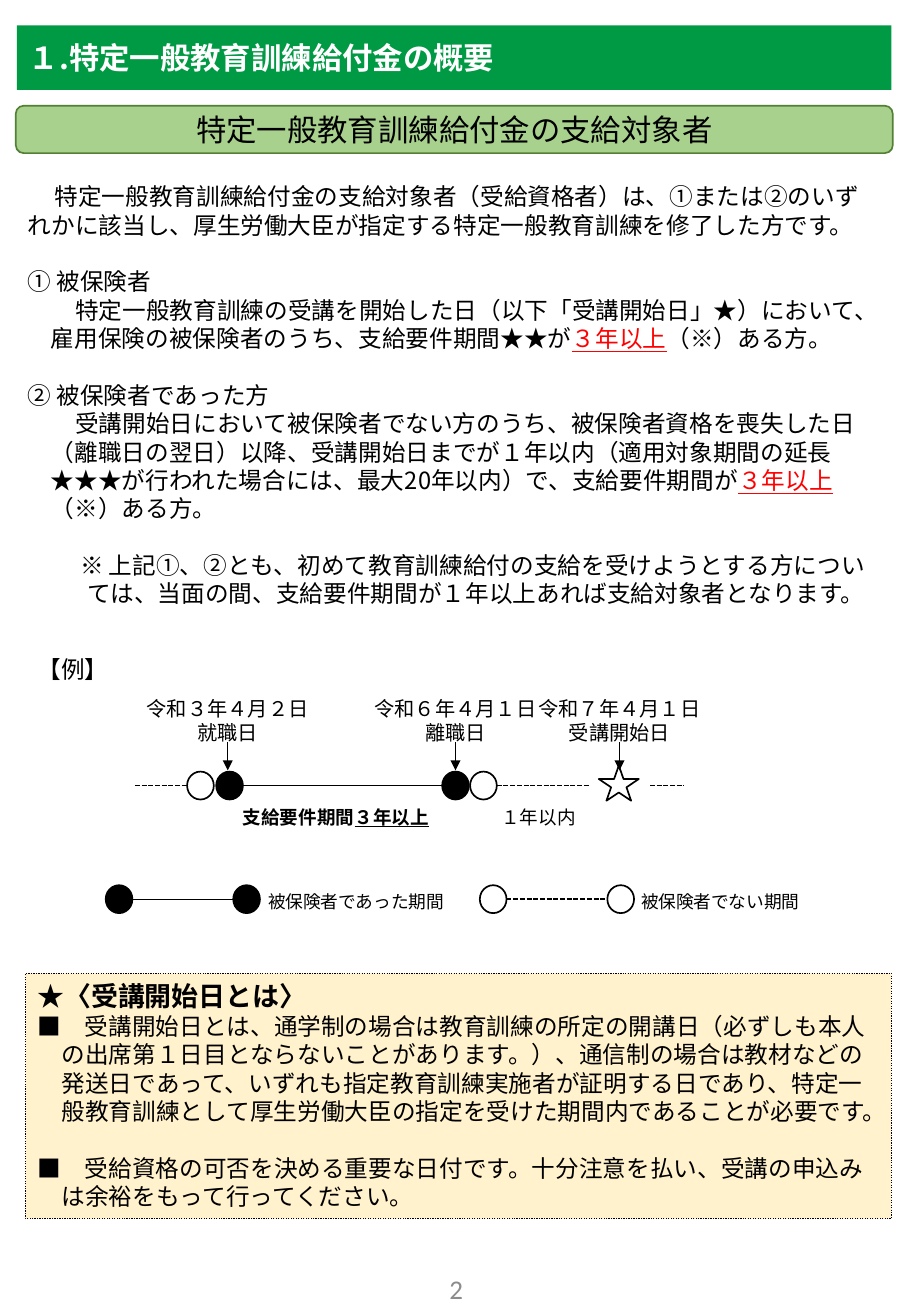
from dataclasses import dataclass
from typing import NamedTuple, Optional

from lxml.etree import SubElement
from pptx import Presentation
from pptx.dml.color import RGBColor
from pptx.enum.dml import MSO_LINE
from pptx.enum.shapes import MSO_CONNECTOR, MSO_SHAPE
from pptx.enum.text import MSO_ANCHOR, PP_ALIGN
from pptx.oxml.ns import qn
from pptx.util import Emu, Inches, Pt


@dataclass(frozen=True)
class Theme:
    font: str = "Noto Sans CJK JP"
    number_font: str = "Calibri"
    black: str = "000000"
    white: str = "FFFFFF"
    red: str = "FF0000"
    gray: str = "8C8C8C"
    banner: str = "009944"
    heading: str = "A9D18E"
    heading_edge: str = "538035"
    note: str = "FFF2CC"
    title: float = 18
    subtitle: float = 16
    body: float = 14
    date: float = 12
    span: float = 11
    legend: float = 10.5
    leading: float = 1.2
    thin: float = 0.5
    border: float = 0.75
    normal: float = 1


THEME = Theme()
CELL = Inches(0.1)  # the grid has square cells: 75 columns across the slide
CIRCLE_WIDTH, CIRCLE_HEIGHT = 2.2, 2.3
TIMELINE_ROW, LEGEND_ROW = 64.65, 74.0


class Area(NamedTuple):
    column: float
    row: float
    columns: float
    rows: float


class Run(NamedTuple):
    text: str
    color: str = THEME.black
    bold: bool = False
    underline: bool = False


class Paragraph(NamedTuple):
    runs: list[Run]
    size: float = THEME.body
    margin: float = 0
    indent: float = 0
    gap: bool = False


class Circle(NamedTuple):
    column: float
    row: float
    fill: str


class Segment(NamedTuple):
    start: float
    end: float
    row: float
    dashed: bool


class Event(NamedTuple):
    column: float
    date: str
    name: str


class Label(NamedTuple):
    area: Area
    runs: list[Run]
    size: float


THREE_YEARS = Run("３年以上", color=THEME.red, underline=True)
EXCEPTION = Run("（※）ある方。")
ELIGIBILITY = [
    Paragraph([Run("特定一般教育訓練給付金の支給対象者（受給資格者）は、①または②のいずれかに該当し、"
                   "厚生労働大臣が指定する特定一般教育訓練を修了した方です。")], indent=2.2),
    Paragraph([Run("① 被保険者")], gap=True),
    Paragraph([Run("特定一般教育訓練の受講を開始した日（以下「受講開始日」★）において、"
                   "雇用保険の被保険者のうち、支給要件期間★★が"),
               THREE_YEARS, EXCEPTION], margin=1.9, indent=2),
    Paragraph([Run("② 被保険者であった方")], gap=True),
    Paragraph([Run("受講開始日において被保険者でない方のうち、被保険者資格を喪失した日（離職日の翌日）以降、"
                   "受講開始日までが１年以内（適用対象期間の延長★★★が行われた場合には、"
                   "最大20年以内）で、支給要件期間が"),
               THREE_YEARS, EXCEPTION], margin=1.9, indent=2),
    Paragraph([Run("※ 上記①、②とも、初めて教育訓練給付の支給を受けようとする方については、"
                   "当面の間、支給要件期間が１年以上あれば支給対象者となります。")],
              margin=4.9, indent=-0.6, gap=True),
]
START_DATE_NOTE = [
    Paragraph([Run("★〈受講開始日とは〉", bold=True)], size=THEME.subtitle),
    Paragraph([Run("■　受講開始日とは、通学制の場合は教育訓練の所定の開講日（必ずしも本人の出席第１日目と"
                   "ならないことがあります。）、通信制の場合は教材などの発送日であって、いずれも"
                   "指定教育訓練実施者が証明する日であり、特定一般教育訓練として厚生労働大臣の指定を"
                   "受けた期間内であることが必要です。")], margin=2, indent=-2),
    Paragraph([Run("■　受給資格の可否を決める重要な日付です。十分注意を払い、受講の申込みは"
                   "余裕をもって行ってください。")], margin=2, indent=-2, gap=True),
]
SEGMENTS = [
    Segment(11.1, 15.4, TIMELINE_ROW, True),
    Segment(19.9, 36.4, TIMELINE_ROW, False),
    Segment(40.9, 48.5, TIMELINE_ROW, True),
    Segment(53.5, 56.3, TIMELINE_ROW, True),
    Segment(10.9, 19.4, LEGEND_ROW, False),
    Segment(41.7, 50, LEGEND_ROW, True),
]
CIRCLES = [
    Circle(16.5, TIMELINE_ROW, THEME.white), Circle(18.9, TIMELINE_ROW, THEME.black),
    Circle(37.5, TIMELINE_ROW, THEME.black), Circle(39.8, TIMELINE_ROW, THEME.white),
    Circle(9.8, LEGEND_ROW, THEME.black), Circle(20.3, LEGEND_ROW, THEME.black),
    Circle(40.6, LEGEND_ROW, THEME.white), Circle(51.1, LEGEND_ROW, THEME.white),
]
EVENTS = [
    Event(18.75, "令和３年４月２日", "就職日"),
    Event(37.5, "令和６年４月１日", "離職日"),
    Event(51, "令和７年４月１日", "受講開始日"),
]
LABELS = [
    Label(Area(2.1, 53.4, 10.5, 3.4), [Run("【例】")], THEME.body),
    Label(Area(19, 65.8, 17.5, 2.9),
          [Run("支給要件期間", bold=True), Run("３年以上", bold=True, underline=True)], THEME.span),
    Label(Area(40.3, 65.8, 8.3, 2.9), [Run("１年以内")], THEME.span),
    Label(Area(21.1, 72.8, 21.1, 2.8), [Run("被保険者であった期間")], THEME.legend),
    Label(Area(51.8, 72.8, 20, 2.8), [Run("被保険者でない期間")], THEME.legend),
]


def cells(count: float) -> Emu:
    return Emu(round(count * CELL))


def write(shape, paragraphs: list[Paragraph], *, align=PP_ALIGN.LEFT,
          anchor=MSO_ANCHOR.TOP, font: str = THEME.font) -> None:
    frame = shape.text_frame
    frame.word_wrap = True
    frame.vertical_anchor = anchor
    for index, content in enumerate(paragraphs):
        paragraph = frame.add_paragraph() if index else frame.paragraphs[0]
        paragraph.alignment = align
        paragraph.line_spacing = Pt(content.size * THEME.leading)
        paragraph.space_before = Pt(content.size * THEME.leading if content.gap else 0)
        properties = paragraph._p.get_or_add_pPr()
        properties.set("marL", str(cells(content.margin)))
        properties.set("indent", str(cells(content.indent)))
        for piece in content.runs:
            run = paragraph.add_run()
            run.text = piece.text
            run.font.name = font
            run.font.size = Pt(content.size)
            run.font.bold = piece.bold
            run.font.underline = piece.underline
            run.font.color.rgb = RGBColor.from_string(piece.color)
            SubElement(run._r.get_or_add_rPr(), qn("a:ea"), typeface=font)


def add_text(slide, area: Area, paragraphs: list[Paragraph], **text_format) -> None:
    write(slide.shapes.add_textbox(*map(cells, area)), paragraphs, **text_format)


def add_figure(slide, kind, area: Area, fill: str, edge: Optional[str] = None,
               width: float = THEME.normal):
    shape = slide.shapes.add_shape(kind, *map(cells, area))
    shape.shadow.inherit = False
    shape.fill.solid()
    shape.fill.fore_color.rgb = RGBColor.from_string(fill)
    if edge is None:
        shape.line.fill.background()
    else:
        shape.line.color.rgb = RGBColor.from_string(edge)
        shape.line.width = Pt(width)
    return shape


def add_line(slide, start: tuple[float, float], end: tuple[float, float], *,
             dashed: bool = False, arrow: bool = False) -> None:
    connector = slide.shapes.add_connector(MSO_CONNECTOR.STRAIGHT, *map(cells, start + end))
    connector.line.color.rgb = RGBColor.from_string(THEME.black)
    connector.line.width = Pt(THEME.normal if dashed else THEME.thin)
    if dashed:
        connector.line.dash_style = MSO_LINE.SQUARE_DOT
    if arrow:
        SubElement(connector.line._get_or_add_ln(), qn("a:tailEnd"), type="triangle")
    SubElement(connector._element.spPr, qn("a:effectLst"))


def add_headings(slide) -> None:
    banner = add_figure(slide, MSO_SHAPE.RECTANGLE, Area(1.4, 2.1, 72, 5.3), THEME.banner)
    title = Run("１.特定一般教育訓練給付金の概要", color=THEME.white, bold=True)
    write(banner, [Paragraph([title], THEME.title)], anchor=MSO_ANCHOR.MIDDLE)
    heading = add_figure(slide, MSO_SHAPE.ROUNDED_RECTANGLE, Area(1.3, 8.7, 72.2, 3.9),
                         THEME.heading, THEME.heading_edge)
    write(heading, [Paragraph([Run("特定一般教育訓練給付金の支給対象者")], THEME.title)],
          align=PP_ALIGN.CENTER, anchor=MSO_ANCHOR.MIDDLE)


def add_example(slide) -> None:
    """Draw the timeline, its events and the legend."""
    for segment in SEGMENTS:
        add_line(slide, (segment.start, segment.row), (segment.end, segment.row),
                 dashed=segment.dashed)
    for circle in CIRCLES:
        area = Area(circle.column - CIRCLE_WIDTH / 2, circle.row - CIRCLE_HEIGHT / 2,
                    CIRCLE_WIDTH, CIRCLE_HEIGHT)
        add_figure(slide, MSO_SHAPE.FLOWCHART_CONNECTOR, area, circle.fill, THEME.black)
    add_figure(slide, MSO_SHAPE.STAR_5_POINT, Area(49.3, 63, 3.3, 2.9), THEME.white, THEME.black)
    for event in EVENTS:
        lines = [Paragraph([Run(text)], THEME.date) for text in (event.date, event.name)]
        add_text(slide, Area(event.column - 7.9, 56.8, 15.8, 5), lines, align=PP_ALIGN.CENTER)
        add_line(slide, (event.column, 61.1), (event.column, 63.4), arrow=True)
    for label in LABELS:
        add_text(slide, label.area, [Paragraph(label.runs, label.size)])


def main() -> None:
    presentation = Presentation()
    presentation.slide_width, presentation.slide_height = cells(75), cells(108.3)
    slide = presentation.slides.add_slide(presentation.slide_layouts[6])
    add_headings(slide)
    add_text(slide, Area(1.3, 14.5, 72.2, 34.3), ELIGIBILITY)
    add_example(slide)
    note = add_figure(slide, MSO_SHAPE.RECTANGLE, Area(2.1, 80.1, 71.3, 20.2),
                      THEME.note, THEME.black, THEME.border)
    note.line.dash_style = MSO_LINE.ROUND_DOT
    write(note, START_DATE_NOTE)
    add_text(slide, Area(29.1, 103.8, 16.9, 5.8 - 1.3),
             [Paragraph([Run("2", color=THEME.gray)], THEME.subtitle)], align=PP_ALIGN.CENTER,
             anchor=MSO_ANCHOR.MIDDLE, font=THEME.number_font)
    presentation.save("out.pptx")


if __name__ == "__main__":
    main()
